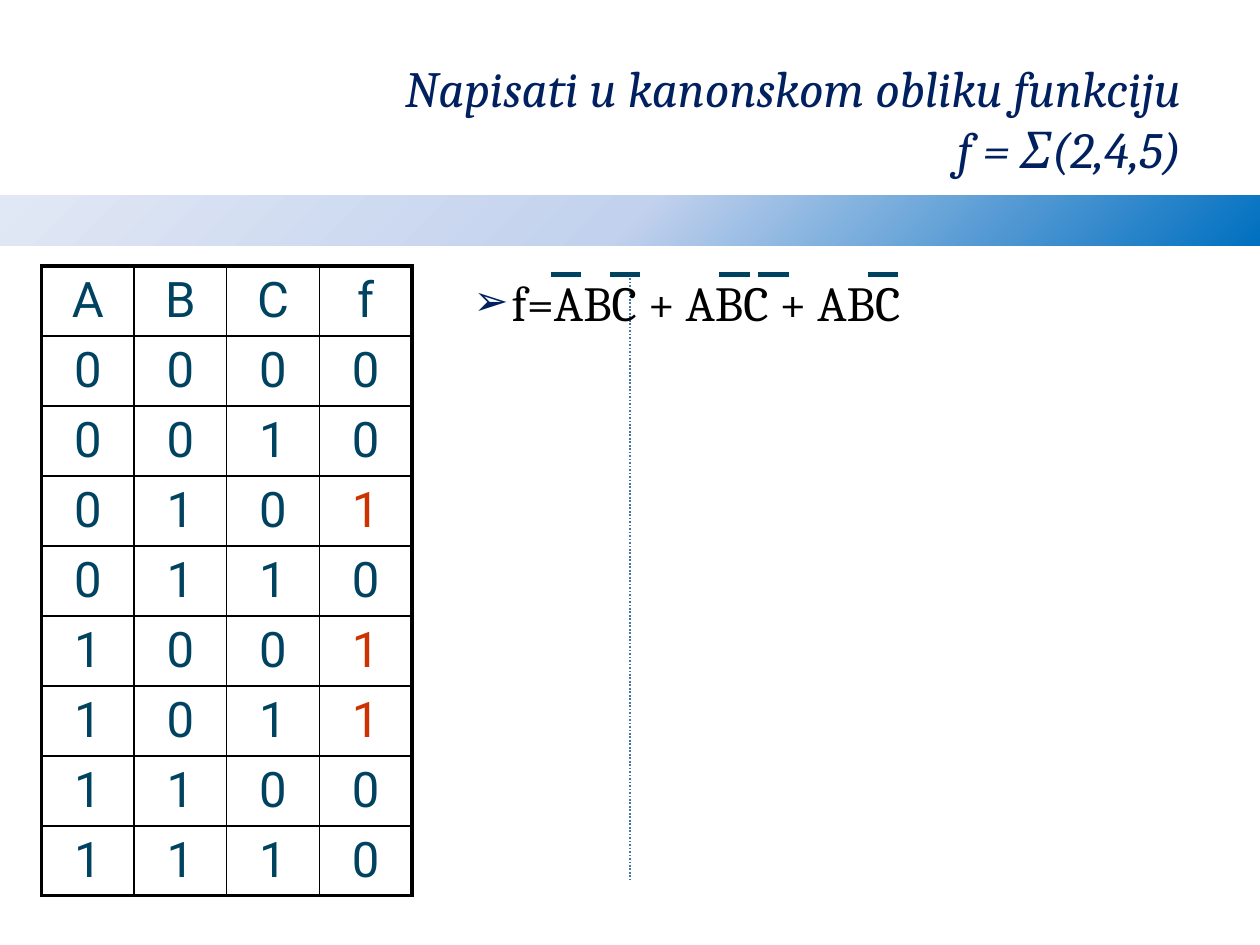
"""Build a slide with a truth table and its canonical form."""
import dataclasses

import lxml.etree
import pptx
import pptx.chart.data
import pptx.dml.color
import pptx.enum.dml
import pptx.enum.shapes
import pptx.enum.text
import pptx.oxml
import pptx.oxml.ns
import pptx.util

Inches = pptx.util.Inches
Pt = pptx.util.Pt
qn = pptx.oxml.ns.qn
ALIGN = pptx.enum.text.PP_ALIGN
COLORS = {
    "navy": "002060", "black": "000000", "teal": "004360", "red": "CC3300",
    "dots": "4875AC", "blue": "0070C0", "mist": "C2D1ED", "pale": "E1E8F5",
}
TITLE = ["Napisati u kanonskom obliku funkciju", "f = Σ(2,4,5)"]
HEADS = ["A", "B", "C", "f"]
TERMS = {2, 4, 5}


@dataclasses.dataclass
class Rule:
    """A straight line with its look."""
    left: float
    top: float
    right: float
    base: float
    color: str = "teal"
    width: float = 3


BARS = [Rule(x, 2.18, x + 0.24, 2.18) for x in (4.37, 4.84, 5.71, 6.89, 6.02)]


def shade(name: str) -> pptx.dml.color.RGBColor:
    """Return a named colour."""
    return pptx.dml.color.RGBColor.from_string(COLORS[name])


def write(para, text: str, font: str, size: float, color: str, slant: bool = False) -> None:
    """Add one formatted run to a paragraph."""
    run = para.add_run()
    run.text = text
    run.font.name = font
    run.font.size = Pt(size)
    run.font.italic = slant
    run.font.color.rgb = shade(color)


def place(shape, left: float, top: float, width: float, height: float) -> None:
    """Move and size a shape, and stop its text from shrinking."""
    shape.left, shape.top = Inches(left), Inches(top)
    shape.width, shape.height = Inches(width), Inches(height)
    shape.text_frame.auto_size = pptx.enum.text.MSO_AUTO_SIZE.NONE


def draw_rule(slide, rule: Rule):
    """Draw a line without a shadow."""
    line = slide.shapes.add_connector(
        pptx.enum.shapes.MSO_CONNECTOR.STRAIGHT, Inches(rule.left),
        Inches(rule.top), Inches(rule.right), Inches(rule.base))
    line.line.color.rgb = shade(rule.color)
    line.line.width = Pt(rule.width)
    lxml.etree.SubElement(line.element.spPr, qn("a:effectLst"))
    return line


def draw_band(slide):
    """Draw the band that fades from the lower right corner."""
    band = slide.shapes.add_shape(
        pptx.enum.shapes.MSO_SHAPE.RECTANGLE, 0, Inches(1.55), Inches(10), Inches(0.4))
    band.shadow.inherit = False
    band.line.fill.background()
    band.fill.gradient()
    grad = band.element.spPr.find(qn("a:gradFill"))
    stops = "".join(
        f'<a:gs pos="{spot * 1000}"><a:srgbClr val="{COLORS[name]}"/></a:gs>'
        for spot, name in ((0, "blue"), (50, "mist"), (100, "pale")))
    fade = pptx.oxml.parse_xml(
        f'<a:gradFill {pptx.oxml.ns.nsdecls("a")} rotWithShape="1">'
        f'<a:gsLst>{stops}</a:gsLst><a:path path="circle">'
        '<a:fillToRect l="100000" t="100000"/></a:path></a:gradFill>')
    grad.getparent().replace(grad, fade)
    return band


def draw_title(shape) -> None:
    """Fill the title, with the first line set in from the right."""
    place(shape, 0.33, 0.25, 9.33, 1.22)
    frame = shape.text_frame
    frame.vertical_anchor = pptx.enum.text.MSO_ANCHOR.BOTTOM
    for i, text in enumerate(TITLE):
        para = frame.add_paragraph() if i else frame.paragraphs[0]
        para.alignment = ALIGN.RIGHT
        write(para, text, "Cambria", 29, "navy", True)
    frame.paragraphs[0]._p.get_or_add_pPr().set("marR", str(Inches(0.18)))


def draw_body(shape) -> None:
    """Fill the body with the bulleted formula."""
    place(shape, 3.66, 2.11, 6, 4.59)
    para = shape.text_frame.paragraphs[0]
    para.space_before = Pt(0)
    prop = para._p.get_or_add_pPr()
    prop.set("marL", str(Inches(0.3)))
    prop.set("indent", str(Inches(-0.3)))
    tint = lxml.etree.SubElement(prop, qn("a:buClr"))
    lxml.etree.SubElement(tint, qn("a:srgbClr"), val=COLORS["navy"])
    lxml.etree.SubElement(prop, qn("a:buSzPct"), val="85000")
    lxml.etree.SubElement(prop, qn("a:buChar"), char="➢")
    write(para, "f=ABC + ABC + ABC", "Cambria", 28, "black")


def edge(cell, sides: dict[str, float]) -> None:
    """Give a cell its borders."""
    prop = cell._tc.get_or_add_tcPr()
    for i, (side, width) in enumerate(sides.items()):
        line = lxml.etree.Element(qn(f"a:ln{side}"), w=str(Pt(width)))
        fill = lxml.etree.SubElement(line, qn("a:solidFill"))
        lxml.etree.SubElement(fill, qn("a:srgbClr"), val=COLORS["black"])
        prop.insert(i, line)


def draw_table(slide) -> None:
    """Draw the truth table with its ones in red."""
    rows = [HEADS] + [[*f"{n:03b}", str(int(n in TERMS))] for n in range(8)]
    frame = slide.shapes.add_table(
        len(rows), len(HEADS), Inches(0.33), Inches(2.11), Inches(2.94), Inches(5.1))
    table = frame.table
    table.first_row = table.horz_banding = False
    for row in table.rows:
        row.height = Inches(0.51)
    for r, row in enumerate(rows):
        for c, text in enumerate(row):
            cell = table.cell(r, c)
            cell.fill.background()
            edge(cell, {
                "L": 1 if c else 2.25,
                "R": 2.25 if c == len(HEADS) - 1 else 1,
                "T": 1 if r else 2.25,
                "B": 2.25 if r == len(rows) - 1 else 1,
            })
            para = cell.text_frame.paragraphs[0]
            para.alignment = ALIGN.CENTER
            hit = c == len(HEADS) - 1 and text == "1"
            write(para, text, "Roboto", 28, "red" if hit else "teal")


def main() -> None:
    """Build and save the slide."""
    deck = pptx.Presentation()
    deck.slide_width, deck.slide_height = Inches(10), Inches(7.5)
    slide = deck.slides.add_slide(deck.slide_layouts[1])
    title, body = slide.placeholders
    split = draw_rule(slide, Rule(5, 2.18, 5, 6.98, "dots", 1))
    split.line.dash_style = pptx.enum.dml.MSO_LINE.ROUND_DOT
    for back in (draw_band(slide), split):
        title.element.addprevious(back.element)
    draw_title(title)
    draw_body(body)
    draw_table(slide)
    for bar in BARS:
        draw_rule(slide, bar)
    deck.save("out.pptx")


if __name__ == "__main__":
    main()
